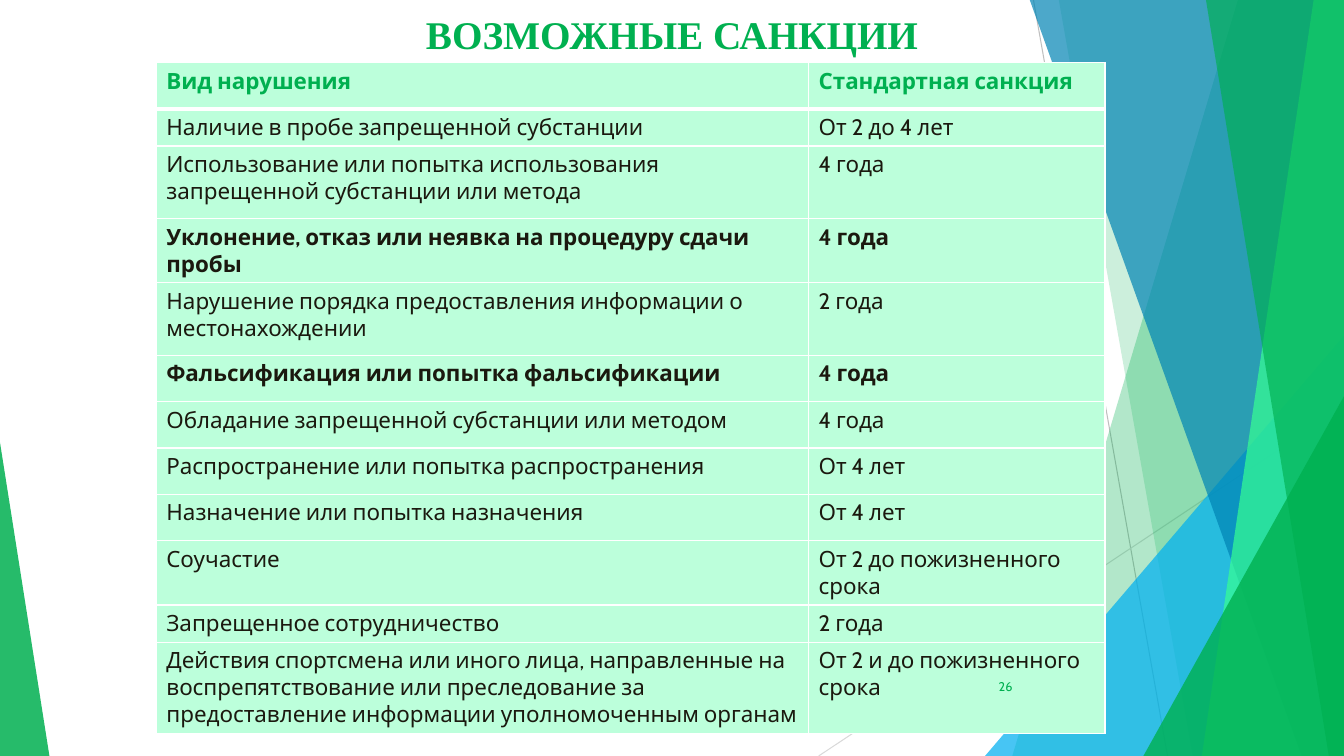
"""Build the slide with a table of sanctions for anti-doping rule violations."""
from lxml.etree import SubElement
from pptx import Presentation
from pptx.dml.color import RGBColor
from pptx.enum.shapes import MSO_CONNECTOR, MSO_SHAPE
from pptx.enum.text import MSO_ANCHOR, PP_ALIGN
from pptx.oxml.ns import qn
from pptx.util import Inches, Pt

GREEN = RGBColor(0x00, 0xB0, 0x50)
BRIGHT_GREEN = RGBColor(0x37, 0xFF, 0x92)
SKY = RGBColor(0x00, 0xB0, 0xF0)
BLUE = RGBColor(0x00, 0x84, 0xB4)
MINT = RGBColor(0xBC, 0xFF, 0xDB)
DARK = RGBColor(0x1B, 0x19, 0x0F)
WHITE = RGBColor(0xFF, 0xFF, 0xFF)
GRAY = RGBColor(0xBF, 0xBF, 0xBF)
LIGHT_GRAY = RGBColor(0xD9, 0xD9, 0xD9)

WIDTH, HEIGHT = 13.33, 7.5
FONT, TITLE_FONT = "Cabin", "Times New Roman"
COLUMNS = [6.47, 2.94]
HEADER = ("Вид нарушения", "Стандартная санкция")
SANCTIONS = [
    (0.36, "Наличие в пробе запрещенной субстанции", "От 2 до 4 лет"),
    (0.72, "Использование или попытка использования запрещенной субстанции или метода", "4 года"),
    (0.63, "Уклонение, отказ или неявка на процедуру сдачи пробы", "4 года"),
    (0.72, "Нарушение порядка предоставления информации о местонахождении", "2 года"),
    (0.46, "Фальсификация или попытка фальсификации", "4 года"),
    (0.46, "Обладание запрещенной субстанции или методом", "4 года"),
    (0.46, "Распространение или попытка распространения", "От 4 лет"),
    (0.46, "Назначение или попытка назначения", "От 4 лет"),
    (0.61, "Соучастие", "От 2 до пожизненного срока"),
    (0.37, "Запрещенное сотрудничество", "2 года"),
    (0.87, "Действия спортсмена или иного лица, направленные на воспрепятствование или "
           "преследование за предоставление информации уполномоченным органам",
     "От 2 и до пожизненного срока"),
]
BOLD_ROWS = {3, 5}


def place(sp, left, top, width, height):
    """Set the position and size of a shape in inches."""
    sp.left, sp.top = Inches(left), Inches(top)
    sp.width, sp.height = Inches(width), Inches(height)


def paint(sp, color, opacity):
    """Give a shape a translucent fill without line or shadow."""
    sp.shadow.inherit = False
    sp.line.fill.background()
    sp.fill.solid()
    sp.fill.fore_color.rgb = color
    srgb = sp.fill._xPr.find(qn("a:solidFill")).find(qn("a:srgbClr"))
    SubElement(srgb, qn("a:alpha"), val=str(opacity * 1000))


def add_wedge(slide, top_x, bottom_x, color, opacity):
    """Add a full-height panel that reaches the right edge of the slide."""
    top = Inches(-0.01)
    right, bottom = Inches(WIDTH), Inches(HEIGHT)
    builder = slide.shapes.build_freeform(Inches(top_x), top)
    builder.add_line_segments([(right, top), (right, bottom), (Inches(bottom_x), bottom)])
    paint(builder.convert_to_shape(), color, opacity)


def add_triangle(slide, left, top, width, apex, color, opacity):
    """Add a right triangle that stands on the bottom edge of the slide."""
    sp = slide.shapes.add_shape(MSO_SHAPE.ISOSCELES_TRIANGLE, Inches(left), Inches(top),
                                Inches(width), Inches(HEIGHT - top))
    sp.adjustments[0] = apex
    paint(sp, color, opacity)


def add_line(slide, x1, y1, x2, y2, color):
    """Add a thin straight line."""
    line = slide.shapes.add_connector(MSO_CONNECTOR.STRAIGHT, Inches(x1), Inches(y1),
                                      Inches(x2), Inches(y2))
    line.line.color.rgb = color
    line.line.width = Pt(0.75)
    SubElement(line._element.spPr, qn("a:effectLst"))


def add_decor(slide):
    """Draw the facets along the sides of the slide."""
    add_line(slide, 10.25, 0, 11.58, HEIGHT, GRAY)
    add_line(slide, WIDTH, 4.03, 8.12, HEIGHT, LIGHT_GRAY)
    add_wedge(slide, 12.28, 10.04, GREEN, 30)
    add_wedge(slide, 10.5, 11.83, GREEN, 20)
    add_triangle(slide, 9.77, 3.33, 3.56, 1, SKY, 72)
    add_wedge(slide, 10.21, 12.91, BLUE, 70)
    add_wedge(slide, 13.03, 11.92, BRIGHT_GREEN, 70)
    add_wedge(slide, 11.96, 13.18, GREEN, 65)
    add_triangle(slide, 11.34, 3.93, 1.99, 1, GREEN, 80)
    add_triangle(slide, 0, 4.39, 0.49, 0, GREEN, 85)


def add_text(tf, text, size, color, font=FONT, bold=False, align=PP_ALIGN.LEFT):
    """Write one formatted run into the first paragraph."""
    p = tf.paragraphs[0]
    p.alignment = align
    r = p.add_run()
    r.text = text
    r.font.name, r.font.size, r.font.bold = font, Pt(size), bold
    r.font.color.rgb = color


def set_title(slide, text):
    """Format the title placeholder and bring it above the facets."""
    title = slide.shapes.title
    place(title, 0, 0.05, WIDTH, 0.57)
    title.text_frame.vertical_anchor = MSO_ANCHOR.TOP
    add_text(title.text_frame, text, 28, GREEN, TITLE_FONT, True, PP_ALIGN.CENTER)
    title._element.getparent().append(title._element)


def set_borders(cell, bottom_width):
    """Draw white borders around a cell."""
    tc_pr = cell._tc.get_or_add_tcPr()
    for side, width in (("L", 1), ("R", 1), ("T", 1), ("B", bottom_width)):
        ln = SubElement(tc_pr, qn(f"a:ln{side}"), w=str(Pt(width)))
        SubElement(SubElement(ln, qn("a:solidFill")), qn("a:srgbClr"), val=str(WHITE))


def add_sanctions_table(slide):
    """Add the table of violations and standard sanctions."""
    rows = [(0.46, *HEADER), *SANCTIONS]
    table = slide.shapes.add_table(len(rows), len(COLUMNS), Inches(1.55), Inches(0.62),
                                   Inches(sum(COLUMNS)), Inches(6.66)).table
    for column, width in zip(table.columns, COLUMNS):
        column.width = Inches(width)
    for i, (height, *texts) in enumerate(rows):
        table.rows[i].height = Inches(height)
        header = i == 0
        for j, text in enumerate(texts):
            cell = table.cell(i, j)
            set_borders(cell, 3 if header else 1)
            cell.fill.solid()
            cell.fill.fore_color.rgb = MINT
            add_text(cell.text_frame, text, 16, GREEN if header else DARK,
                     bold=header or i in BOLD_ROWS)


def add_page_number(slide, number):
    """Add the page number."""
    sp = slide.shapes.add_textbox(0, 0, 0, 0)
    place(sp, 9.39, 6.61, 0.75, 0.4)
    tf = sp.text_frame
    tf.word_wrap = True
    tf.vertical_anchor = MSO_ANCHOR.MIDDLE
    add_text(tf, number, 9, GREEN, align=PP_ALIGN.RIGHT)


def main():
    """Build and save the presentation."""
    prs = Presentation()
    prs.slide_width, prs.slide_height = Inches(WIDTH), Inches(HEIGHT)
    slide = prs.slides.add_slide(prs.slide_layouts[5])
    add_decor(slide)
    set_title(slide, "ВОЗМОЖНЫЕ САНКЦИИ")
    add_sanctions_table(slide)
    add_page_number(slide, "26")
    prs.save("out.pptx")


if __name__ == "__main__":
    main()
